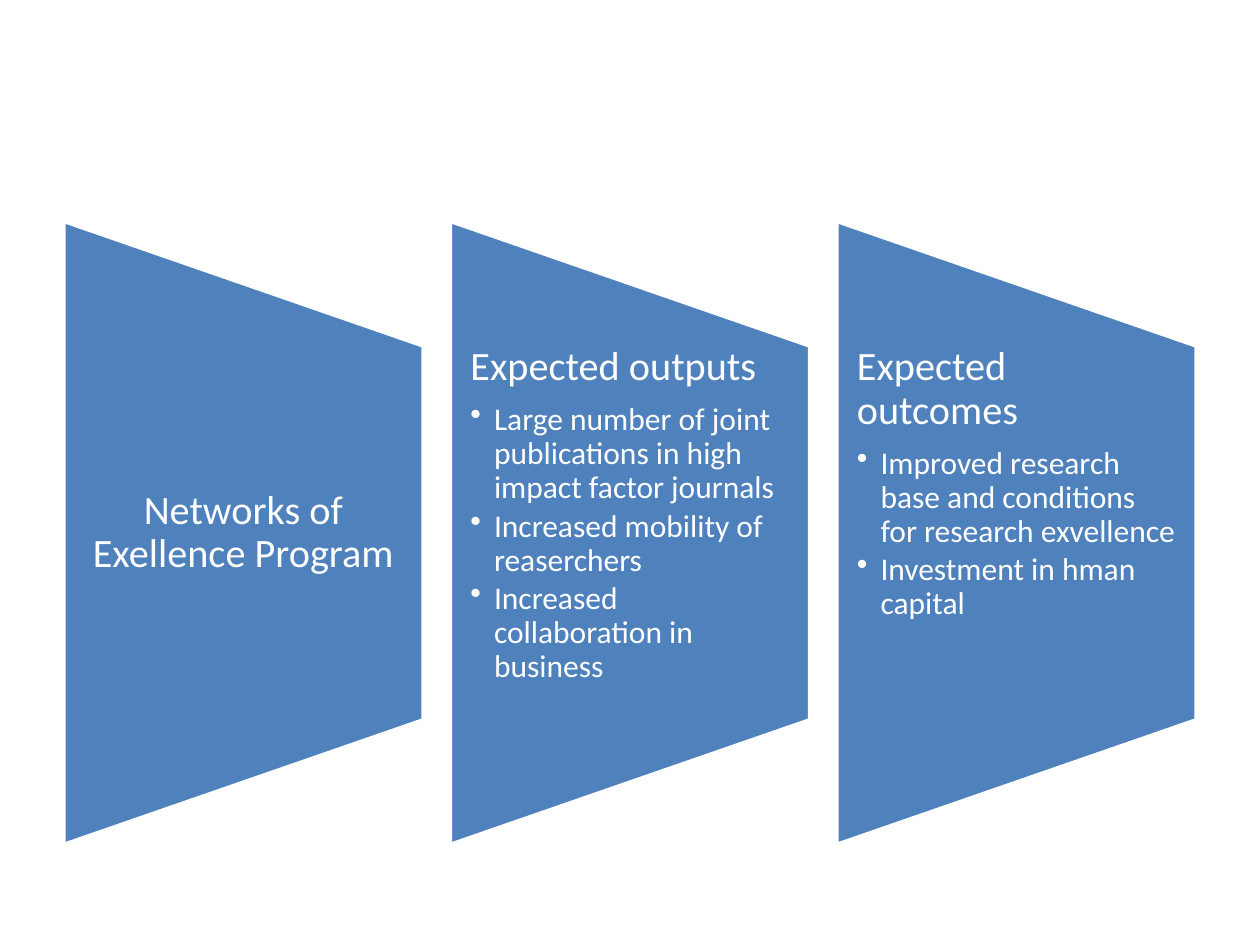
import dataclasses

import pptx
import pptx.dml.color
import pptx.enum.shapes
import pptx.enum.text
import pptx.oxml.ns
import pptx.util
from lxml import etree

Pt = pptx.util.Pt
RGB = pptx.dml.color.RGBColor
ALIGN = pptx.enum.text.PP_ALIGN
ANCHOR = pptx.enum.text.MSO_ANCHOR


@dataclasses.dataclass(frozen=True)
class Theme:
    """Colours, font and type sizes of the slide."""
    panel: RGB = RGB(0x4F, 0x81, 0xBD)
    white: RGB = RGB(0xFF, 0xFF, 0xFF)
    font: str = "Calibri"
    heading: float = 23
    body: float = 18


@dataclasses.dataclass(frozen=True)
class Box:
    """A region of the slide in points."""
    left: float
    top: float
    width: float
    height: float


THEME = Theme()
PANELS = [
    ("Networks of Exellence Program", []),
    ("Expected outputs", [
        "Large number of joint publications in high impact factor journals",
        "Increased mobility of reaserchers",
        "Increased collaboration in business",
    ]),
    ("Expected outcomes", [
        "Improved research base and conditions for research exvellence",
        "Investment in hman capital",
    ]),
]


def format_paragraph(paragraph, size, space_after):
    """Set the spacing of a paragraph and the font of its runs."""
    paragraph.line_spacing = 0.9
    paragraph.space_before = Pt(0)
    paragraph.space_after = Pt(space_after)
    for run in paragraph.runs:
        run.font.name = THEME.font
        run.font.size = Pt(size)
        run.font.color.rgb = THEME.white


def add_bullet(paragraph):
    """Give a paragraph a round bullet with a hanging indent."""
    paragraph.level = 1
    properties = paragraph._p.get_or_add_pPr()
    indent = Pt(13.5)
    properties.set("marL", str(indent))
    properties.set("indent", str(-indent))
    bullet = etree.SubElement(properties, pptx.oxml.ns.qn("a:buChar"))
    bullet.set("char", "•")


def add_trapezoid(slide, box):
    """Draw the sideways trapezoid that fills the box."""
    shape = slide.shapes.add_shape(
        pptx.enum.shapes.MSO_SHAPE.FLOWCHART_MANUAL_OPERATION,
        Pt(box.left + (box.width - box.height) / 2),
        Pt(box.top + (box.height - box.width) / 2),
        Pt(box.height), Pt(box.width))
    shape.rotation = 270
    shape.shadow.inherit = False
    shape.fill.solid()
    shape.fill.fore_color.rgb = THEME.panel
    shape.line.color.rgb = THEME.white
    shape.line.width = Pt(2)


def add_panel_text(slide, box, heading, bullets):
    """Write the heading and bullets in the middle three fifths of the box."""
    text_box = slide.shapes.add_textbox(
        Pt(box.left), Pt(box.top + box.height / 5),
        Pt(box.width), Pt(box.height * 3 / 5))
    text_frame = text_box.text_frame
    text_frame.word_wrap = True
    text_frame.margin_left = text_frame.margin_right = Pt(11.5)
    text_frame.margin_top = text_frame.margin_bottom = Pt(0)
    text_frame.vertical_anchor = ANCHOR.TOP if bullets else ANCHOR.MIDDLE
    text_frame.text = heading
    title = text_frame.paragraphs[0]
    title.alignment = ALIGN.LEFT if bullets else ALIGN.CENTER
    format_paragraph(title, THEME.heading, 8)
    for bullet in bullets:
        paragraph = text_frame.add_paragraph()
        paragraph.text = bullet
        paragraph.alignment = ALIGN.LEFT
        format_paragraph(paragraph, THEME.body, 2.5)
        add_bullet(paragraph)


def add_panels(slide, box, gap):
    """Lay the panels out in equal columns across the box."""
    width = (box.width - gap * (len(PANELS) - 1)) / len(PANELS)
    for index, (heading, bullets) in enumerate(PANELS):
        panel = Box(box.left + index * (width + gap), box.top, width, box.height)
        add_trapezoid(slide, panel)
        add_panel_text(slide, panel, heading, bullets)


def main():
    """Build and save the presentation."""
    presentation = pptx.Presentation()
    presentation.slide_width = Pt(720)
    presentation.slide_height = Pt(540)
    slide = presentation.slides.add_slide(presentation.slide_layouts[6])
    add_panels(slide, Box(36.5, 126.5, 647, 356), 15.5)
    presentation.save("out.pptx")


if __name__ == "__main__":
    main()
